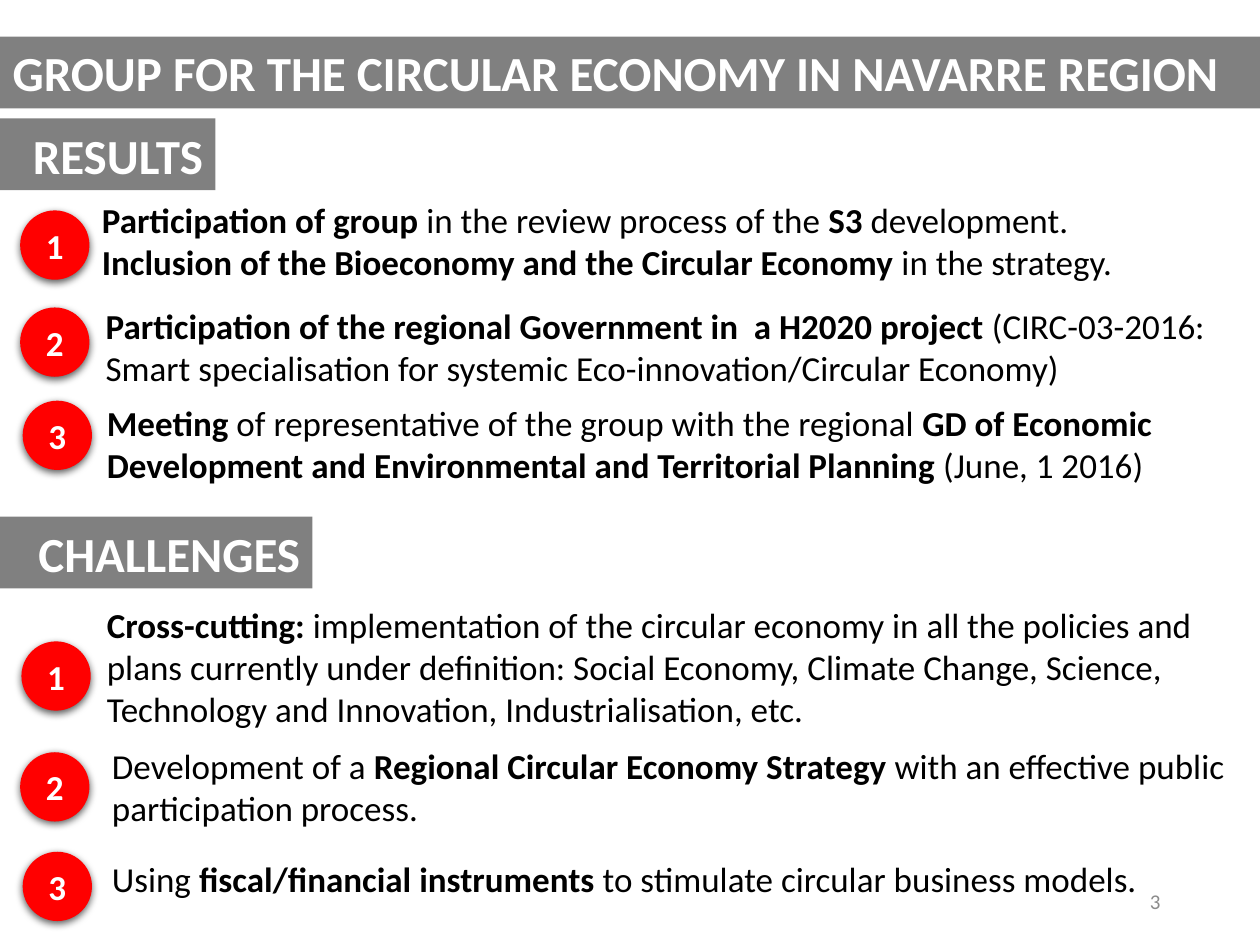
from dataclasses import dataclass

from lxml.etree import SubElement
from pptx import Presentation
from pptx.dml.color import RGBColor
from pptx.enum.shapes import MSO_SHAPE
from pptx.enum.text import MSO_ANCHOR, MSO_AUTO_SIZE, PP_ALIGN
from pptx.oxml.ns import qn
from pptx.util import Inches, Pt


@dataclass(frozen=True)
class Theme:
    font: str = "Calibri"
    bar: RGBColor = RGBColor(0x80, 0x80, 0x80)
    badge: RGBColor = RGBColor(0xFF, 0x00, 0x00)
    light: RGBColor = RGBColor(0xFF, 0xFF, 0xFF)
    dark: RGBColor = RGBColor(0x00, 0x00, 0x00)
    muted: RGBColor = RGBColor(0x8C, 0x8C, 0x8C)
    heading: int = 28
    body: int = 20
    note: int = 12


THEME = Theme()
BAR_H = 0.57
BADGE = 0.55
TEXT_W = 9.16

SECTIONS = [
    ("RESULTS", 0.94, 1.71, [
        ((0.16, 1.67), (0.71, 1.53, 0.77),
         "**Participation of group **in the review process of the **S3** development.\n"
         "**Inclusion of the Bioeconomy and the Circular Economy **in the strategy."),
        ((0.16, 2.44), (0.74, 2.37, 0.77),
         "**Participation of the regional Government in  a H2020 project** (CIRC-03-2016: "
         "Smart specialisation for systemic Eco-innovation/Circular Economy)"),
        ((0.18, 3.18), (0.75, 3.14, 0.77),
         "**Meeting **of representative of the group with the regional **GD of Economic "
         "Development and Environmental and Territorial Planning **(June, 1 2016)"),
    ]),
    ("CHALLENGES", 4.1, 2.48, [
        ((0.17, 5.09), (0.75, 4.74, 1.11),
         "**Cross-cutting: **implementation of the circular economy in all the policies and "
         "plans currently under definition: Social Economy, Climate Change, Science, "
         "Technology and Innovation, Industrialisation, etc."),
        ((0.16, 5.97), (0.79, 5.86, 0.77),
         "Development of a **Regional Circular Economy Strategy **with an effective public "
         "participation process."),
        ((0.18, 6.76), (0.79, 6.76, 0.44),
         "Using **fiscal/financial instruments **to stimulate circular business models."),
    ]),
]


def write(sp, text, size=THEME.body, color=THEME.dark, bold=False,
          align=PP_ALIGN.LEFT, anchor=MSO_ANCHOR.TOP):
    tf = sp.text_frame
    tf.word_wrap = True
    tf.auto_size = MSO_AUTO_SIZE.NONE
    tf.vertical_anchor = anchor
    for i, line in enumerate(text.split("\n")):
        p = tf.add_paragraph() if i else tf.paragraphs[0]
        p.alignment = align
        for j, part in enumerate(line.split("**")):
            if not part:
                continue
            r = p.add_run()
            r.text = part
            r.font.name = THEME.font
            r.font.size = Pt(size)
            r.font.bold = bold or j % 2 == 1
            r.font.color.rgb = color


def fill_solid(sp, color):
    sp.fill.solid()
    sp.fill.fore_color.rgb = color


def add_title(s, text):
    sp = s.shapes.title
    sp.left, sp.top, sp.width, sp.height = map(Inches, (0, 0.29, 10, BAR_H))
    fill_solid(sp, THEME.bar)
    write(sp, text, size=THEME.heading, color=THEME.light, bold=True)


def add_filled(s, kind, box, color):
    sp = s.shapes.add_shape(kind, *map(Inches, box))
    sp.shadow.inherit = False
    fill_solid(sp, color)
    sp.line.fill.background()
    return sp


def add_heading(s, text, top, width):
    sp = add_filled(s, MSO_SHAPE.RECTANGLE, (0, top, width, BAR_H), THEME.bar)
    write(sp, text, size=THEME.heading, color=THEME.light, bold=True,
          align=PP_ALIGN.RIGHT, anchor=MSO_ANCHOR.BOTTOM)


def add_shadow(sp):
    effects = sp._element.spPr.find(qn("a:effectLst"))
    shadow = SubElement(effects, qn("a:outerShdw"), blurRad=str(Pt(4.5)),
                        dist=str(Pt(1.5)), dir="5400000", algn="ctr", rotWithShape="0")
    color = SubElement(shadow, qn("a:srgbClr"), val=str(THEME.dark))
    SubElement(color, qn("a:alpha"), val="63000")


def add_badge(s, number, left, top):
    sp = add_filled(s, MSO_SHAPE.OVAL, (left, top, BADGE, BADGE), THEME.badge)
    add_shadow(sp)
    write(sp, str(number), color=THEME.light, bold=True,
          align=PP_ALIGN.CENTER, anchor=MSO_ANCHOR.MIDDLE)


def add_text(s, text, box, **fmt):
    write(s.shapes.add_textbox(*map(Inches, box)), text, **fmt)


def main():
    prs = Presentation()
    prs.slide_width, prs.slide_height = Inches(10), Inches(7.5)
    s = prs.slides.add_slide(prs.slide_layouts[5])
    add_text(s, "3", (7.06, 6.95, 2.25, 0.4), size=THEME.note, color=THEME.muted,
             align=PP_ALIGN.RIGHT, anchor=MSO_ANCHOR.MIDDLE)
    add_title(s, "GROUP FOR THE CIRCULAR ECONOMY IN NAVARRE REGION")
    for heading, top, width, items in SECTIONS:
        add_heading(s, heading, top, width)
        for number, (badge, (left, y, height), text) in enumerate(items, 1):
            add_badge(s, number, *badge)
            add_text(s, text, (left, y, TEXT_W, height))
    prs.save("out.pptx")


if __name__ == "__main__":
    main()
